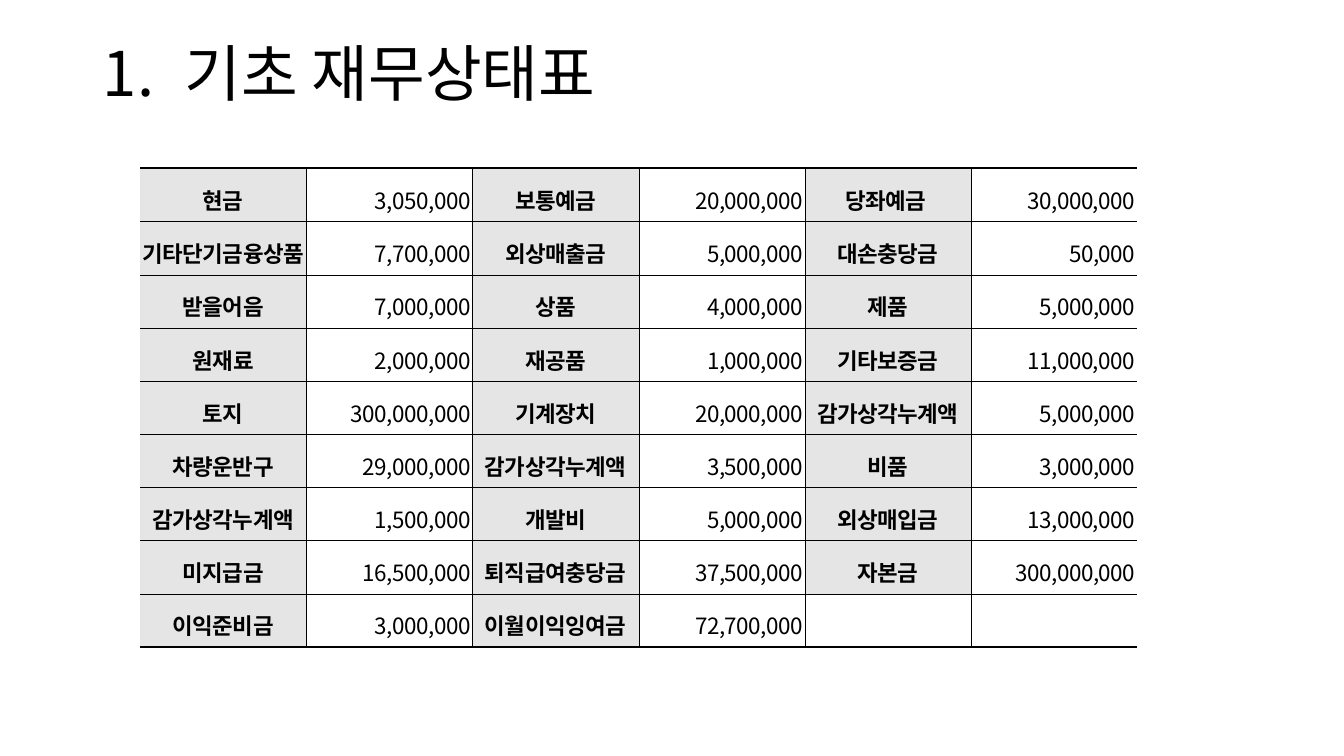
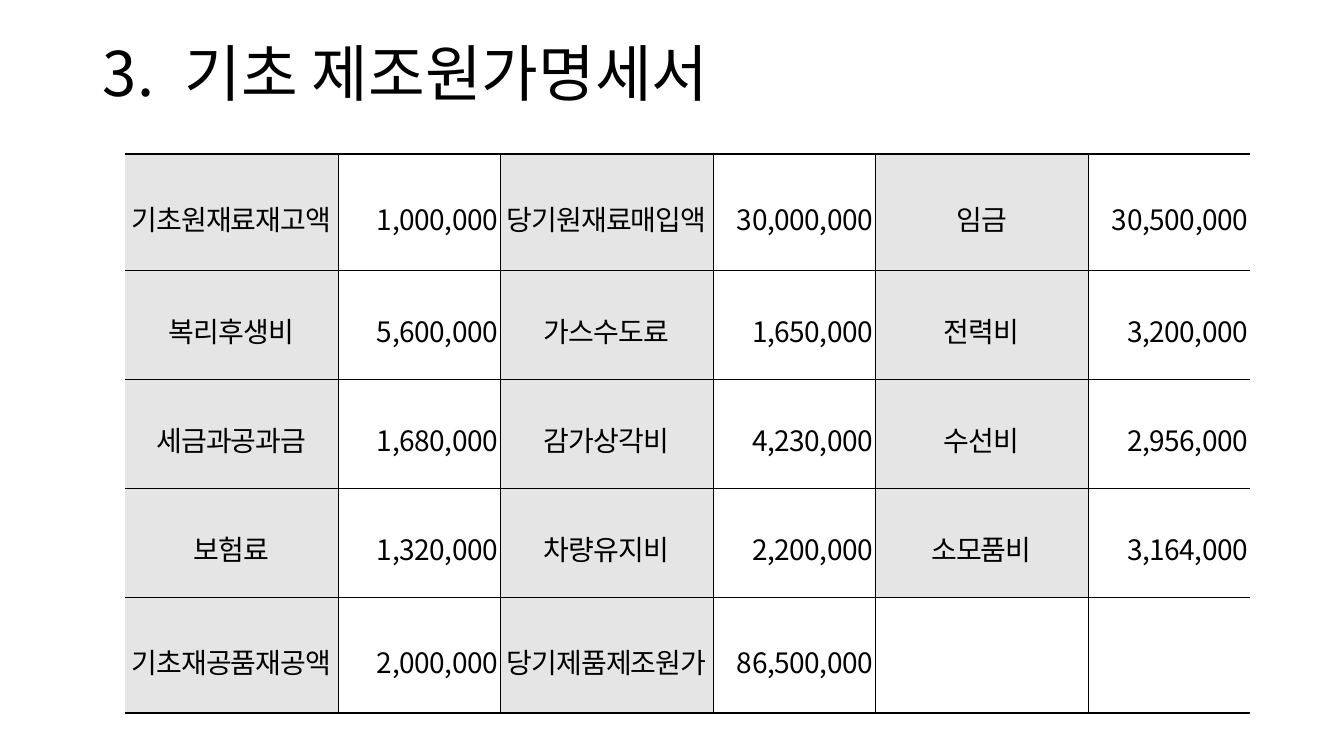
import pptx
import pptx.dml.color
import pptx.enum.text
import pptx.oxml
import pptx.oxml.ns
import pptx.util
from pptx.util import Inches

FONT = "Noto Sans CJK KR"
COLORS = {"ink": "000000", "label": "E5E5E5"}
THIN, THICK = 0.25, 1.7
MARGIN = Inches(0.02)
TITLE_INDENT = Inches(0.81)

BALANCE_ROWS = [
    ["현금", "3,050,000", "보통예금", "20,000,000", "당좌예금 ", "30,000,000"],
    ["기타단기금융상품", "7,700,000", "외상매출금", "5,000,000", "대손충당금", "50,000"],
    ["받을어음", "7,000,000", "상품", "4,000,000", "제품", "5,000,000"],
    ["원재료", "2,000,000", "재공품", "1,000,000", "기타보증금", "11,000,000"],
    ["토지", "300,000,000", "기계장치", "20,000,000", "감가상각누계액", "5,000,000"],
    ["차량운반구", "29,000,000", "감가상각누계액", "3,500,000", "비품", "3,000,000"],
    ["감가상각누계액", "1,500,000", "개발비", "5,000,000", "외상매입금", "13,000,000"],
    ["미지급금", "16,500,000", "퇴직급여충당금", "37,500,000", "자본금", "300,000,000"],
    ["이익준비금", "3,000,000", "이월이익잉여금", "72,700,000", "", ""],
]

COST_ROWS = [
    ["기초원재료재고액", "1,000,000", "당기원재료매입액", "30,000,000", "임금", "30,500,000"],
    ["복리후생비", "5,600,000", "가스수도료", "1,650,000", "전력비", "3,200,000"],
    ["세금과공과금", "1,680,000", "감가상각비", "4,230,000", "수선비", "2,956,000"],
    ["보험료", "1,320,000", "차량유지비", "2,200,000", "소모품비", "3,164,000"],
    ["기초재공품재공액", "2,000,000", "당기제품제조원가", "86,500,000", "", ""],
]


def add_child(parent, tag, **attributes):
    child = pptx.oxml.parse_xml(f"<a:{tag} {pptx.oxml.ns.nsdecls('a')}/>")
    for key, value in attributes.items():
        child.set(key, str(value))
    parent.append(child)
    return child


def set_font(run, size, bold=False, spacing=0):
    run.font.size = pptx.util.Pt(size)
    run.font.bold = bold
    run.font.name = FONT
    run.font.color.rgb = pptx.dml.color.RGBColor.from_string(COLORS["ink"])
    properties = run.font._element
    add_child(properties, "ea", typeface=FONT)
    if spacing:
        properties.set("spc", str(round(spacing * 100)))


def style_master_title(master):
    title = next(p for p in master.placeholders if p.placeholder_format.idx == 0)
    title.left, title.top = Inches(0.92), Inches(0.4)
    title.width, title.height = Inches(11.5), Inches(1.45)
    qn = pptx.oxml.ns.qn
    title_style = next(master.element.iter(qn("p:titleStyle")))
    level = title_style.find(qn("a:lvl1pPr"))
    level.set("algn", "l")
    defaults = level.find(qn("a:defRPr"))
    defaults.set("sz", "4400")
    for tag in ("a:latin", "a:ea"):
        for typeface in defaults.findall(qn(tag)):
            typeface.set("typeface", FONT)


def add_titled_slide(prs, number, heading):
    slide = prs.slides.add_slide(prs.slide_layouts[5])
    frame = slide.shapes.title.text_frame
    frame.auto_size = pptx.enum.text.MSO_AUTO_SIZE.NONE
    frame.vertical_anchor = pptx.enum.text.MSO_ANCHOR.MIDDLE
    frame.text = heading + "\v"
    paragraph = frame.paragraphs[0]
    paragraph.line_spacing = 0.9
    properties = paragraph._p.get_or_add_pPr()
    properties.set("marL", str(int(TITLE_INDENT)))
    properties.set("indent", str(-int(TITLE_INDENT)))
    add_child(properties, "buFont", typeface=FONT)
    add_child(properties, "buAutoNum", type="arabicPeriod", startAt=number)
    for run in paragraph.runs:
        set_font(run, 44)
    return slide


def set_borders(cell, widths):
    properties = cell._tc.get_or_add_tcPr()
    for side in "LRTB":
        width = widths[side]
        line = add_child(properties, "ln" + side, w=int(pptx.util.Pt(width)))
        if width:
            fill = add_child(line, "solidFill")
            add_child(fill, "srgbClr", val=COLORS["ink"])
        else:
            add_child(line, "noFill")


def fill_cell(cell, text, is_label, size, bold, spacing):
    if not text:
        cell.fill.background()
        return
    if is_label:
        cell.fill.solid()
        cell.fill.fore_color.rgb = pptx.dml.color.RGBColor.from_string(COLORS["label"])
    else:
        cell.fill.background()
    cell.margin_left = cell.margin_right = MARGIN
    cell.margin_top = cell.margin_bottom = MARGIN
    cell.vertical_anchor = pptx.enum.text.MSO_ANCHOR.MIDDLE
    cell.text_frame.text = text
    paragraph = cell.text_frame.paragraphs[0]
    align = pptx.enum.text.PP_ALIGN
    paragraph.alignment = align.CENTER if is_label else align.RIGHT
    paragraph.line_spacing = 1.3
    set_font(paragraph.runs[0], size, bold, spacing)


def add_account_table(slide, rows, left, top, widths, heights, size, label_bold, label_spacing):
    columns = len(rows[0])
    frame = slide.shapes.add_table(
        len(rows), columns, Inches(left), Inches(top),
        Inches(sum(widths)), Inches(sum(heights)))
    table = frame.table
    table.first_row = table.horz_banding = False
    for column, width in zip(table.columns, widths):
        column.width = Inches(width)
    for row, height in zip(table.rows, heights):
        row.height = Inches(height)
    for r, accounts in enumerate(rows):
        for c, text in enumerate(accounts):
            cell = table.cell(r, c)
            set_borders(cell, {
                "L": THIN if c > 0 else 0,
                "R": THIN if c < columns - 1 else 0,
                "T": THIN if r > 0 else THICK,
                "B": THIN if r < len(rows) - 1 else THICK,
            })
            is_label = c % 2 == 0
            fill_cell(cell, text, is_label, size, label_bold and is_label,
                      label_spacing if is_label else -0.3)


def main():
    prs = pptx.Presentation()
    prs.slide_width, prs.slide_height = Inches(13.33), Inches(7.5)
    style_master_title(prs.slide_master)

    balance = add_titled_slide(prs, 1, "기초 재무상태표")
    add_account_table(balance, BALANCE_ROWS, 1.39, 1.67, [9.89 / 6] * 6, [4.75 / 9] * 9,
                      size=16, label_bold=True, label_spacing=-0.3)

    cost = add_titled_slide(prs, 3, "기초 제조원가명세서")
    add_account_table(cost, COST_ROWS, 1.24, 1.53, [2.11, 1.61] * 3,
                      [1.15, 1.08, 1.08, 1.08, 1.15],
                      size=20, label_bold=False, label_spacing=-0.7)

    prs.save("out.pptx")


if __name__ == "__main__":
    main()
